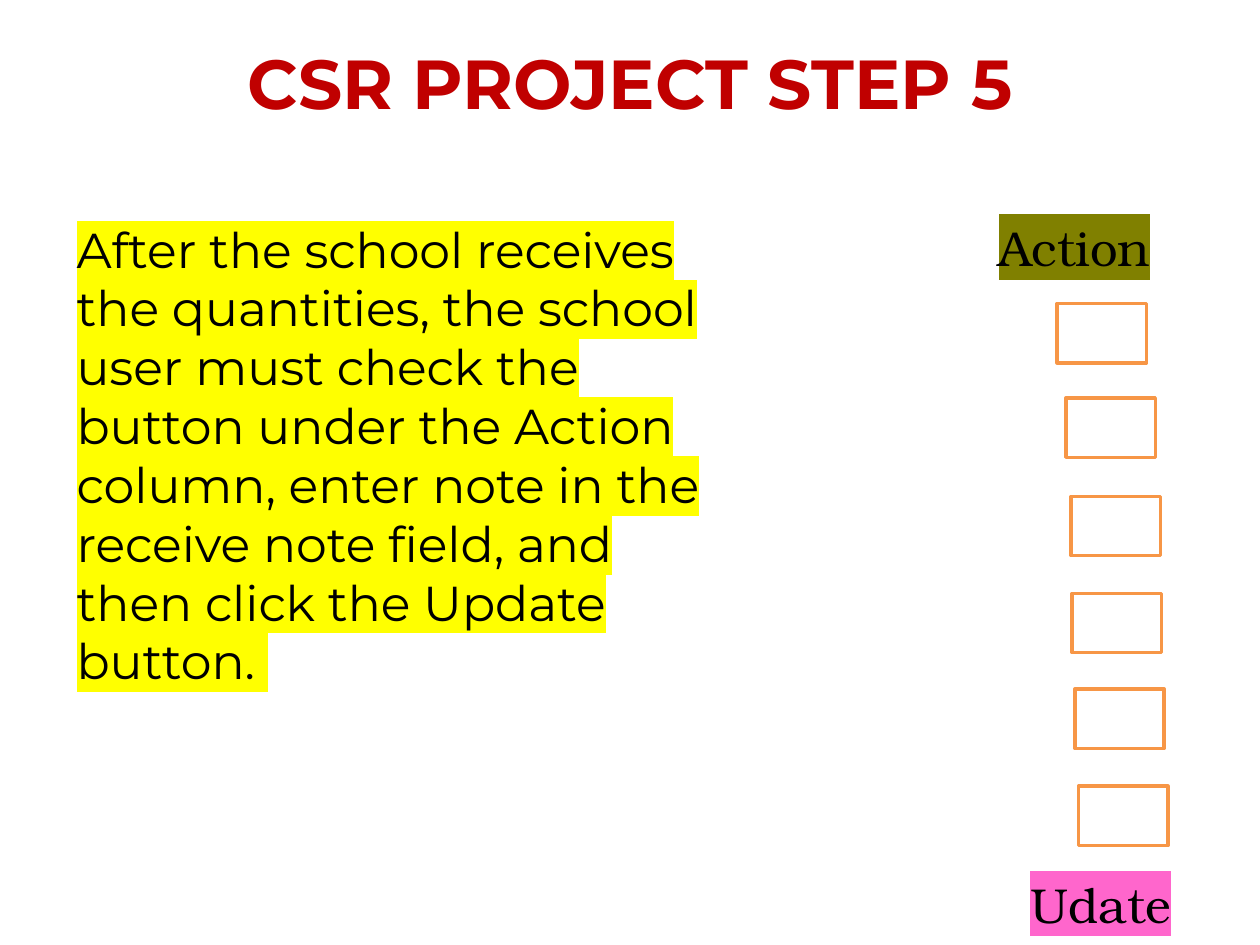
from dataclasses import dataclass

from lxml import etree
from pptx import Presentation
from pptx.dml.color import RGBColor
from pptx.enum.shapes import MSO_SHAPE
from pptx.enum.text import MSO_ANCHOR, PP_ALIGN
from pptx.oxml.ns import qn
from pptx.util import Inches, Pt

RECT = MSO_SHAPE.RECTANGLE
TOP = MSO_ANCHOR.TOP
MIDDLE = MSO_ANCHOR.MIDDLE
LEFT = PP_ALIGN.LEFT
CENTER = PP_ALIGN.CENTER


@dataclass(frozen=True)
class Theme:
    sans: str = "Montserrat"
    serif: str = "TeX Gyre Bonum"
    head: float = 39.6
    body: float = 28
    line: float = 2
    red: str = "C00000"
    black: str = "000000"
    white: str = "FFFFFF"
    orange: str = "F79646"
    yellow: str = "FFFF00"
    olive: str = "808000"
    pink: str = "FF66CC"


def rgb(code):
    return RGBColor.from_string(code)


class Deck:
    def __init__(self, theme):
        self.theme = theme
        self.file = Presentation()
        self.file.slide_width = Inches(10)
        self.file.slide_height = Inches(7.5)
        self.slide = self.file.slides.add_slide(self.file.slide_layouts[6])

    def text(self, words, x, y, w, h, font, size, color,
             bold=False, align=LEFT, anchor=TOP):
        box = self.slide.shapes.add_textbox(
            Inches(x), Inches(y), Inches(w), Inches(h))
        frame = box.text_frame
        frame.word_wrap = True
        frame.vertical_anchor = anchor
        frame.text = words
        para = frame.paragraphs[0]
        para.alignment = align
        run = para.runs[0]
        run.font.name = font
        run.font.size = Pt(size)
        run.font.bold = bold
        run.font.color.rgb = rgb(color)
        return run

    def title(self, words, x, y, w, h):
        look = self.theme
        self.text(words, x, y, w, h, look.sans, look.head, look.red,
                  bold=True, align=CENTER, anchor=MIDDLE)

    def marked(self, words, x, y, w, h, font, shade):
        look = self.theme
        run = self.text(words, x, y, w, h, font, look.body, look.black)
        mark = etree.Element(qn("a:highlight"))
        etree.SubElement(mark, qn("a:srgbClr"), val=shade)
        run.font._element.find(qn("a:solidFill")).addnext(mark)

    def check(self, x, y, w, h):
        box = self.slide.shapes.add_shape(
            RECT, Inches(x), Inches(y), Inches(w), Inches(h))
        box.shadow.inherit = False
        box.fill.solid()
        box.fill.fore_color.rgb = rgb(self.theme.white)
        box.line.color.rgb = rgb(self.theme.orange)
        box.line.width = Pt(self.theme.line)


def main():
    look = Theme()
    deck = Deck(look)
    deck.title("CSR PROJECT STEP 5", 0.5, 0.3, 9, 0.69)
    deck.marked(
        "After the school receives the quantities, the school user must "
        "check the button under the Action column, enter note in the "
        "receive note field, and then click the Update button. ",
        0.51, 1.69, 5.24, 4.34, look.sans, look.yellow)
    deck.marked("Action", 7.83, 1.68, 1.56, 0.57, look.serif, look.olive)
    spots = [(8.39, 2.41), (8.46, 3.16), (8.5, 3.94),
             (8.51, 4.71), (8.53, 5.47), (8.56, 6.24)]
    for x, y in spots:
        deck.check(x, y, 0.71, 0.47)
    deck.marked("Udate", 8.08, 6.89, 1.56, 0.57, look.serif, look.pink)
    deck.file.save("out.pptx")


if __name__ == "__main__":
    main()
